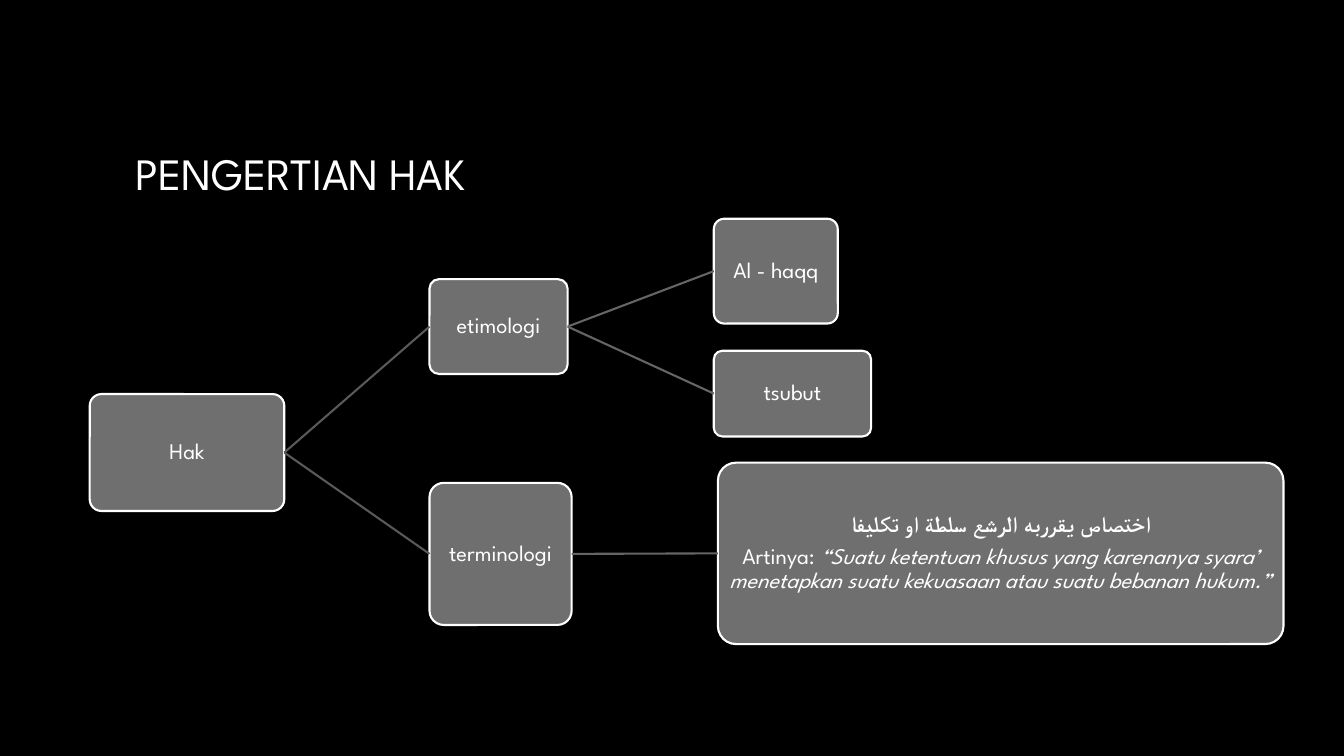
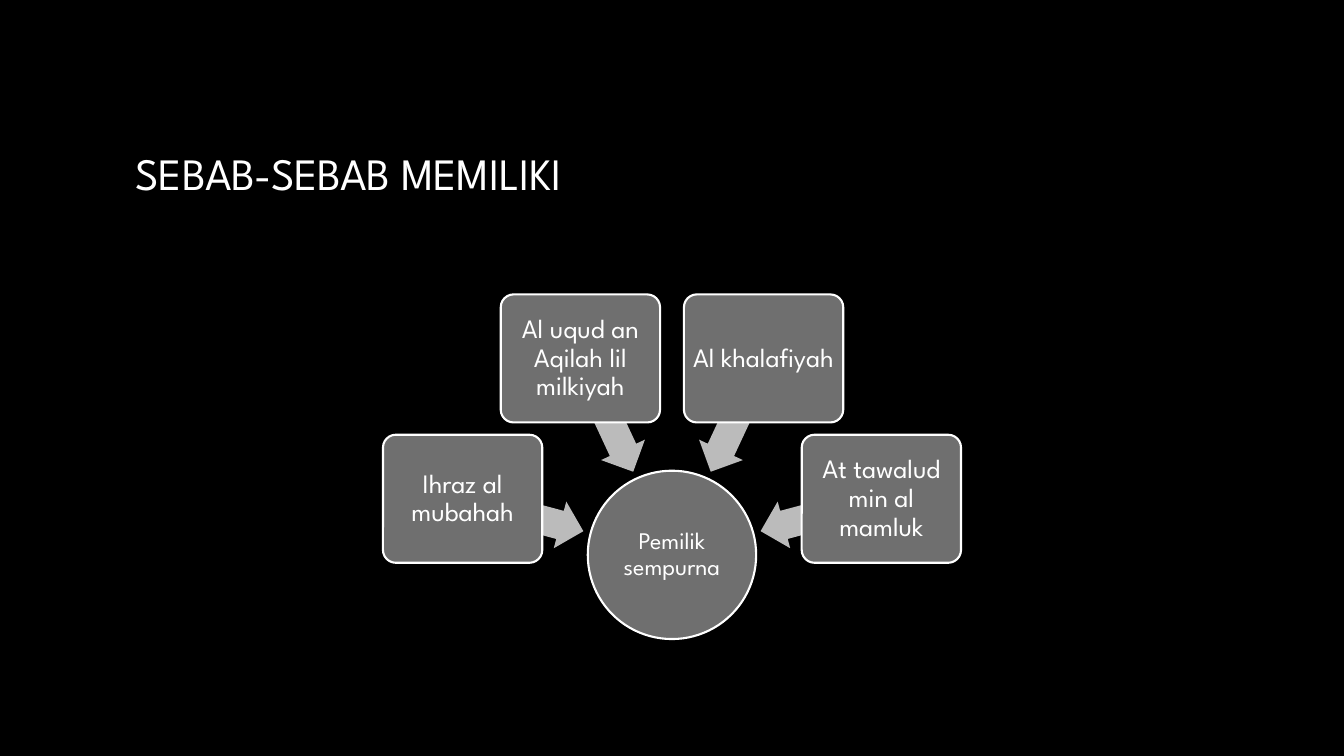
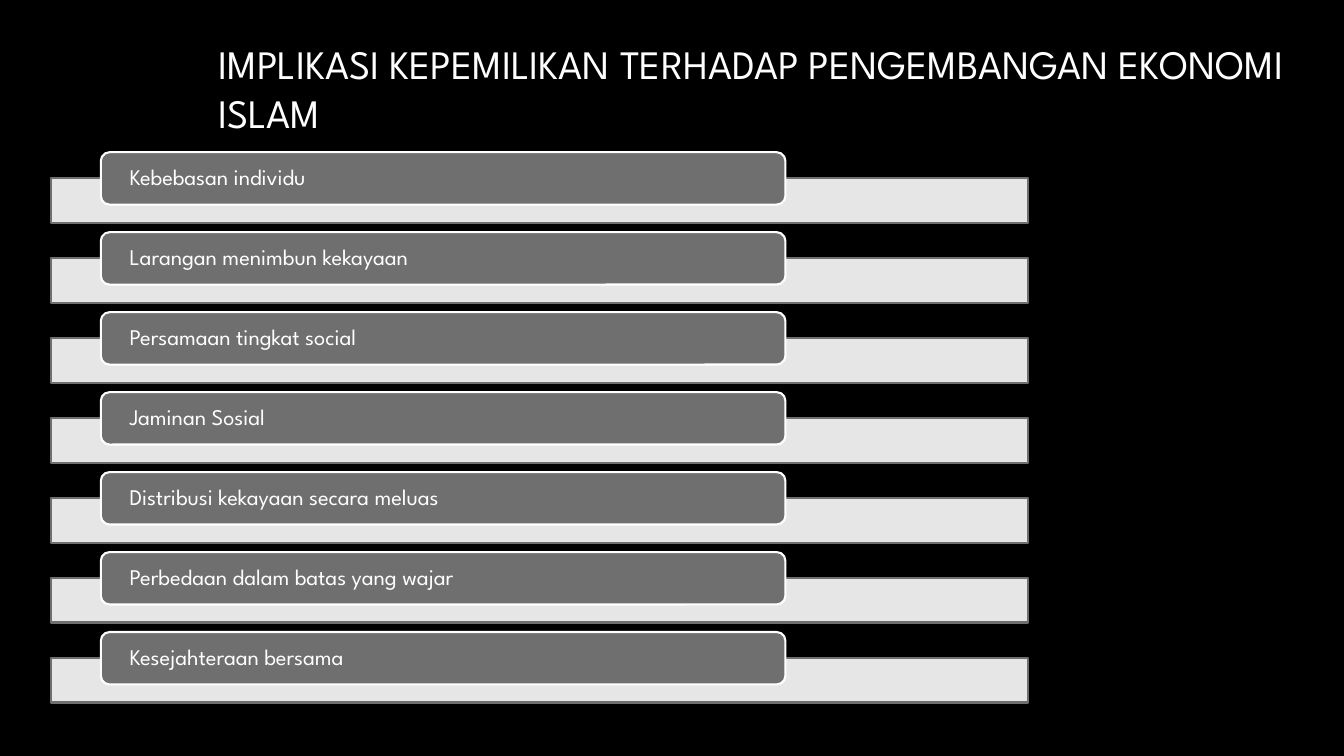
from math import cos, radians, sin

from lxml import etree
from pptx import Presentation
from pptx.dml.color import RGBColor
from pptx.enum.shapes import MSO_CONNECTOR, MSO_SHAPE
from pptx.enum.text import MSO_ANCHOR, PP_ALIGN
from pptx.oxml.ns import qn
from pptx.util import Inches, Pt

ROUND, RECT = MSO_SHAPE.ROUNDED_RECTANGLE, MSO_SHAPE.RECTANGLE
OVAL, ARROW = MSO_SHAPE.OVAL, MSO_SHAPE.LEFT_ARROW
STRAIGHT = MSO_CONNECTOR.STRAIGHT
MIDDLE = MSO_ANCHOR.MIDDLE
LEFT, CENTER = PP_ALIGN.LEFT, PP_ALIGN.CENTER
LEFT_SIDE, RIGHT_SIDE = 1, 3

FONT = "League Spartan"
BLACK, WHITE, GREY, SILVER = "000000", "FFFFFF", "6F6F6F", "BBBBBB"
LINE_WIDTH = Pt(1.5)
CORNER = 0.1
TITLE_BOX = (1.25, 0.67, 10.83, 2.08)

# Title runs: text, size, letter spacing in points
TITLE_HAK = [("PENGERTIAN HAK", 32, -0.2)]
TITLE_SEBAB = [("SEBAB-SEBAB ", 32, -0.3), ("MEMILIKI", 32, -0.2)]
TITLE_IMPLIKASI = [
    ("IMPLIKASI KEPEMILIKAN TERHADAP PENGEMBANGAN EKONOMI", 28.8, 0),
    (" ", 32.4, 0),
    ("ISLAM", 28.8, -0.2),
]

# Paragraphs of runs: text, format
DEFINITION = [
    [("اختصاص يقرربه الرشع سلطة او تكليفا", {"bold": True})],
    [("Artinya: ", {}),
     ("“Suatu ketentuan khusus yang karenanya syara’ menetapkan "
      "suatu kekuasaan atau suatu bebanan hukum.”", {"italic": True})],
]


def plain(text):
    return [[(text, {})]]


# Tree nodes: key, box, paragraphs
TREE = [
    ("hak", (0.89, 3.91, 1.93, 1.16), plain("Hak")),
    ("etimologi", (4.26, 2.77, 1.37, 0.94), plain("etimologi")),
    ("al-haqq", (7.08, 2.17, 1.23, 1.04), plain("Al - haqq")),
    ("tsubut", (7.08, 3.48, 1.56, 0.85), plain("tsubut")),
    ("terminologi", (4.26, 4.79, 1.41, 1.41), plain("terminologi")),
    ("definisi", (7.12, 4.59, 5.61, 1.8), DEFINITION),
]
BRANCHES = [
    ("hak", "etimologi", "595959"),
    ("hak", "terminologi", "595959"),
    ("etimologi", "al-haqq", "656565"),
    ("etimologi", "tsubut", "656565"),
    ("terminologi", "definisi", "656565"),
]

HUB = "Pemilik sempurna"
HUB_CENTER, HUB_SIZE = (6.665, 5.505), 1.67
CAUSES = ["Ihraz al mubahah", "Al uqud an Aqilah lil milkiyah",
          "Al khalafiyah", "At tawalud min al mamluk"]
FIRST_ANGLE, ANGLE_STEP = 15, 50
CAUSE_RADIUS, CAUSE_SIZE = 2.15, (1.58, 1.27)
ARROW_RADIUS, ARROW_SIZE = 1.53, (1.24, 0.48)

IMPLICATIONS = [
    "Kebebasan individu",
    "Larangan menimbun kekayaan",
    "Persamaan tingkat social",
    "Jaminan Sosial",
    "Distribusi kekayaan secara meluas",
    "Perbedaan dalam batas yang wajar",
    "Kesejahteraan bersama",
]
FIRST_TOP, LAST_TOP, BAR_DROP = 1.51, 6.27, 0.26


def rgb(value):
    return RGBColor.from_string(value)


def set_margins(tf, x, y):
    tf.margin_left = tf.margin_right = Inches(x)
    tf.margin_top = tf.margin_bottom = Inches(y)


def add_run(p, text, size, **fmt):
    r = p.add_run()
    r.text = text
    r.font.name = FONT
    r.font.size = Pt(size)
    r.font.color.rgb = rgb(WHITE)
    for name, value in fmt.items():
        setattr(r.font, name, value)
    return r


def new_slide(prs, title, box=TITLE_BOX, indent=0):
    s = prs.slides.add_slide(prs.slide_layouts[6])
    s.background.fill.solid()
    s.background.fill.fore_color.rgb = rgb(BLACK)
    tf = s.shapes.add_textbox(*map(Inches, box)).text_frame
    tf.word_wrap = True
    tf.vertical_anchor = MIDDLE
    p = tf.paragraphs[0]
    p._p.get_or_add_pPr().set("marL", str(Inches(indent)))
    for text, size, spacing in title:
        r = add_run(p, text, size)
        r._r.get_or_add_rPr().set("spc", str(round(spacing * 100)))
    return s


def add_block(s, kind, box, fill=GREY, line=WHITE, adjust=()):
    sp = s.shapes.add_shape(kind, *map(Inches, box))
    sp.shadow.inherit = False
    sp.fill.solid()
    sp.fill.fore_color.rgb = rgb(fill)
    if line:
        sp.line.color.rgb = rgb(line)
        sp.line.width = LINE_WIDTH
    else:
        sp.line.fill.background()
    for i, value in enumerate(adjust):
        sp.adjustments[i] = value
    return sp


def write(sp, paragraphs, size, margins, align=CENTER):
    tf = sp.text_frame
    tf.word_wrap = True
    tf.vertical_anchor = MIDDLE
    set_margins(tf, *margins)
    for i, runs in enumerate(paragraphs):
        p = tf.add_paragraph() if i else tf.paragraphs[0]
        p.alignment = align
        p.line_spacing = 0.9
        p.space_after = Pt(0.35 * size)
        for text, fmt in runs:
            add_run(p, text, size, **fmt)


def join(s, parent, child, color):
    line = s.shapes.add_connector(STRAIGHT, 0, 0, 0, 0)
    line.begin_connect(parent, RIGHT_SIDE)
    line.end_connect(child, LEFT_SIDE)
    line.line.color.rgb = rgb(color)
    line.line.width = LINE_WIDTH
    etree.SubElement(line._element.spPr, qn("a:effectLst"))


def around_hub(angle, radius, size):
    """Box of the given size, centred on a circle about the hub (0 = left, 90 = top)."""
    (cx, cy), (w, h) = HUB_CENTER, size
    a = radians(angle)
    return cx - radius * cos(a) - w / 2, cy - radius * sin(a) - h / 2, w, h


def build_tree(prs):
    s = new_slide(prs, TITLE_HAK)
    nodes = {}
    for key, box, paragraphs in TREE:
        nodes[key] = add_block(s, ROUND, box, adjust=[CORNER])
        write(nodes[key], paragraphs, 16, (0.01, 0.01))
    for parent, child, color in BRANCHES:
        join(s, nodes[parent], nodes[child], color)


def build_causes(prs):
    s = new_slide(prs, TITLE_SEBAB)
    hub = add_block(s, OVAL, around_hub(0, 0, (HUB_SIZE, HUB_SIZE)))
    write(hub, plain(HUB), 17, (0.01, 0.01))
    for i, cause in enumerate(CAUSES):
        angle = FIRST_ANGLE + i * ANGLE_STEP
        arrow = add_block(s, ARROW, around_hub(angle, ARROW_RADIUS, ARROW_SIZE),
                          SILVER, None, [0.6, 0.5])
        arrow.rotation = 180 + angle
        box = add_block(s, ROUND, around_hub(angle, CAUSE_RADIUS, CAUSE_SIZE),
                        adjust=[CORNER])
        write(box, plain(cause), 19, (0.04, 0.04))


def build_implications(prs):
    s = new_slide(prs, TITLE_IMPLIKASI, (2.04, 0.29, 10.82, 1.11), 0.03)
    pitch = (LAST_TOP - FIRST_TOP) / (len(IMPLICATIONS) - 1)
    for i, text in enumerate(IMPLICATIONS):
        top = FIRST_TOP + i * pitch
        bar = add_block(s, RECT, (0.51, top + BAR_DROP, 9.69, 0.44), WHITE, GREY)
        color = bar.fill._xPr.find(qn("a:solidFill"))[0]
        etree.SubElement(color, qn("a:alpha"), val="90000")
        label = add_block(s, ROUND, (1, top, 6.79, 0.52))
        write(label, plain(text), 16, (0.26, 0), LEFT)


def main():
    prs = Presentation()
    prs.slide_width, prs.slide_height = Inches(13.33), Inches(7.5)
    build_tree(prs)
    build_causes(prs)
    build_implications(prs)
    prs.save("out.pptx")


if __name__ == "__main__":
    main()
